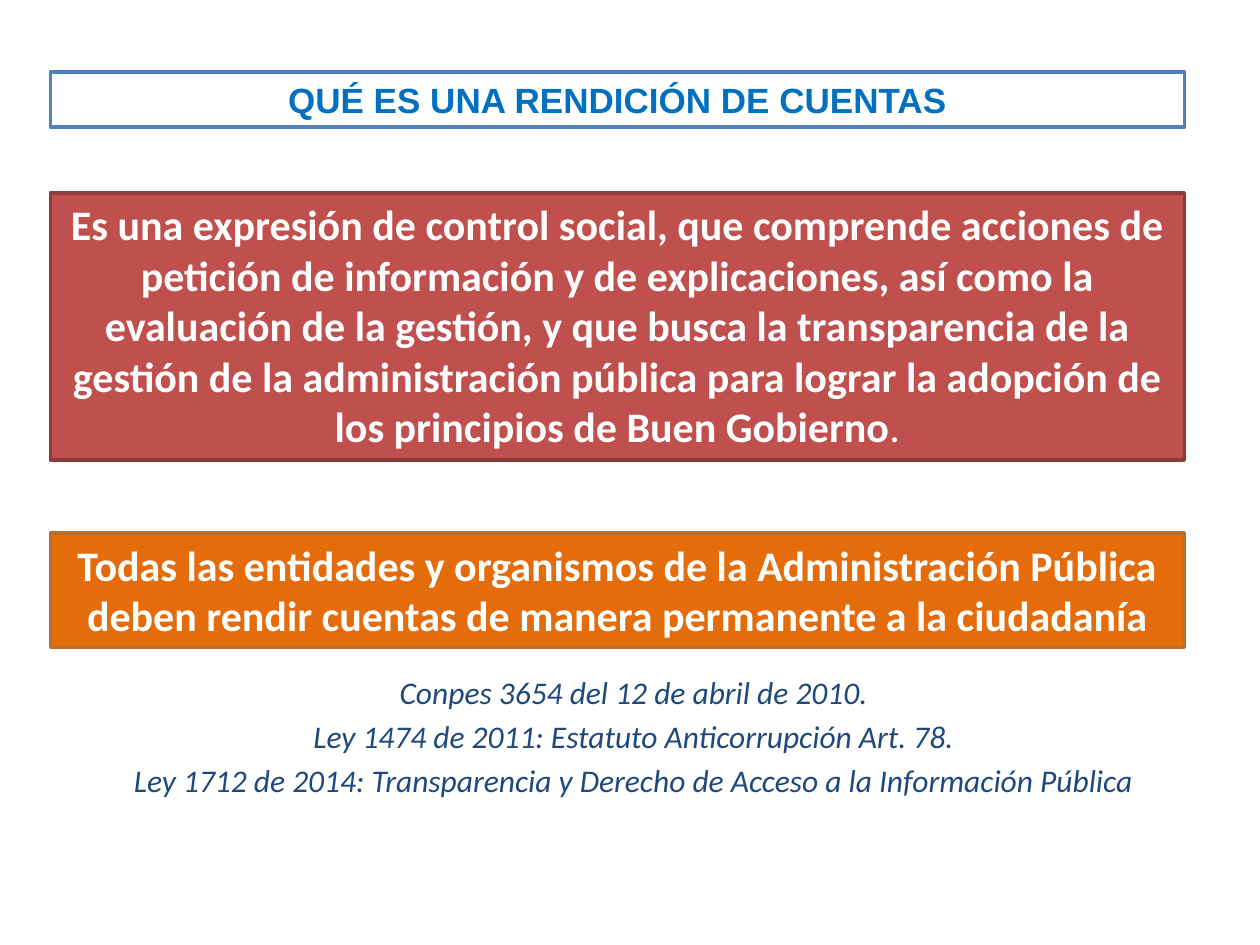
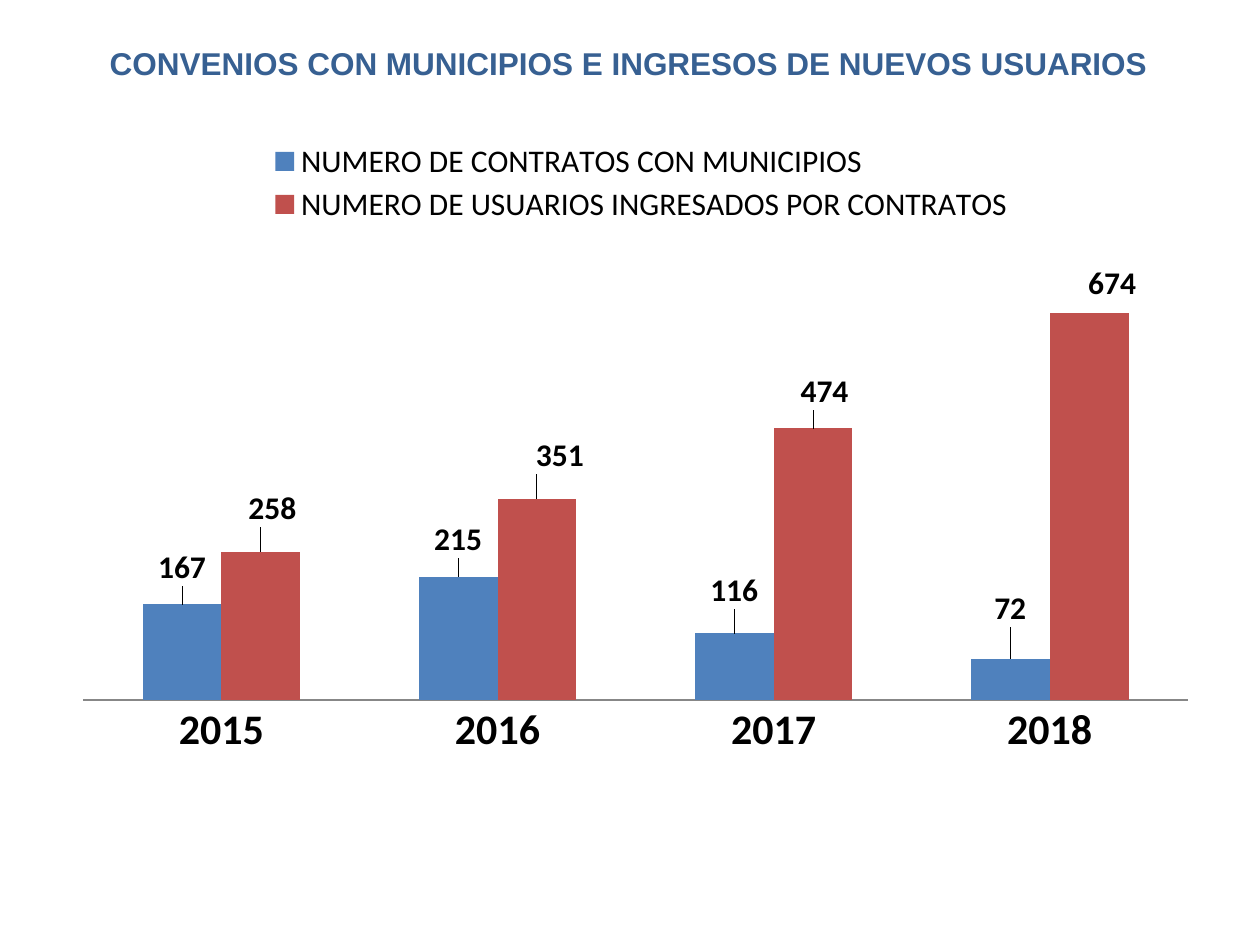
"""Build two slides on public accountability and municipal agreements."""
from dataclasses import dataclass
from typing import Optional

from lxml import etree
from pptx import Presentation
from pptx.chart.chart import Chart
from pptx.chart.data import CategoryChartData
from pptx.chart.series import BarSeries
from pptx.dml.color import RGBColor
from pptx.enum.chart import XL_CHART_TYPE as ChartType
from pptx.enum.chart import XL_LABEL_POSITION as LabelPosition
from pptx.enum.chart import XL_LEGEND_POSITION as LegendPosition
from pptx.enum.chart import XL_TICK_LABEL_POSITION as TickLabelPosition
from pptx.enum.chart import XL_TICK_MARK as TickMark
from pptx.enum.shapes import MSO_SHAPE as ShapeType
from pptx.enum.text import MSO_ANCHOR as Anchor
from pptx.enum.text import MSO_AUTO_SIZE as AutoSize
from pptx.enum.text import PP_ALIGN as Align
from pptx.oxml import parse_xml
from pptx.oxml.ns import nsdecls, qn
from pptx.shapes.base import BaseShape
from pptx.slide import Slide
from pptx.text.text import Font
from pptx.util import Inches, Pt


@dataclass(frozen=True)
class Theme:
    """Fonts, type sizes in points and colours."""

    heading_font: str = "Arial"
    body_font: str = "Calibri"
    title_size: int = 20
    large_size: int = 24
    small_size: int = 18
    white: str = "FFFFFF"
    black: str = "000000"
    blue: str = "4F81BD"
    red: str = "C0504D"
    red_border: str = "8E3B39"
    orange: str = "E46C0A"
    orange_border: str = "B76F34"
    bright_title: str = "0070C0"
    muted_title: str = "376092"
    law_text: str = "1F497D"
    axis: str = "878787"


@dataclass(frozen=True)
class Box:
    """A rectangle in inches."""

    left: float
    top: float
    width: float
    height: float


@dataclass(frozen=True)
class Panel:
    """A filled statement, with an optional ending in regular weight."""

    box: Box
    text: str
    fill: str
    border: str
    ending: str = ""


@dataclass(frozen=True)
class ChartSeries:
    """A chart series with its label shifts as fractions of the chart."""

    name: str
    values: tuple[int, ...]
    color: str
    label_shifts: tuple[tuple[float, float], ...]


THEME = Theme()
BORDER_WIDTH = 2
TITLE_LAYOUT, LIST_LAYOUT = 5, 1
PANEL_LEFT, PANEL_WIDTH = 0.4, 9

PANELS = (
    Panel(
        Box(PANEL_LEFT, 1.53, PANEL_WIDTH, 2.12),
        "Es una expresión de control social, que comprende acciones de petición de "
        "información y de explicaciones, así como la evaluación de la gestión, y que "
        "busca la transparencia de la gestión de la administración pública para lograr "
        "la adopción de los principios de Buen Gobierno",
        THEME.red,
        THEME.red_border,
        ".",
    ),
    Panel(
        Box(PANEL_LEFT, 4.23, PANEL_WIDTH, 0.91),
        "Todas las entidades y organismos de la Administración Pública deben rendir "
        "cuentas de manera permanente a la ciudadanía",
        THEME.orange,
        THEME.orange_border,
    ),
)
LAWS = (
    "Conpes 3654 del 12 de abril de 2010.",
    "Ley 1474 de 2011: Estatuto Anticorrupción Art. 78.",
    "Ley 1712 de 2014: Transparencia y Derecho de Acceso a la Información Pública",
)
YEARS = ("2015", "2016", "2017", "2018")
SERIES = (
    ChartSeries(
        "NUMERO DE CONTRATOS CON MUNICIPIOS",
        (167, 215, 116, 72),
        THEME.blue,
        ((0, -0.02), (0, -0.02), (0, -0.03), (0, -0.04)),
    ),
    ChartSeries(
        "NUMERO DE USUARIOS INGRESADOS POR CONTRATOS",
        (258, 351, 474, 674),
        THEME.red,
        ((0.01, -0.03), (0.02, -0.03), (0.01, -0.02), (0.02, -0.01)),
    ),
)


def set_font(font: Font, size: int, color: str, name: str = THEME.body_font,
             bold: bool = False, italic: bool = False) -> None:
    """Format a font."""
    font.name, font.size = name, Pt(size)
    font.bold, font.italic = bold, italic
    font.color.rgb = RGBColor.from_string(color)


def place(shape: BaseShape, box: Box) -> None:
    """Move and size a shape."""
    shape.left, shape.top = Inches(box.left), Inches(box.top)
    shape.width, shape.height = Inches(box.width), Inches(box.height)


def paint(shape: BaseShape, fill: str, border: str) -> None:
    """Fill and outline a shape."""
    shape.fill.solid()
    shape.fill.fore_color.rgb = RGBColor.from_string(fill)
    shape.line.color.rgb = RGBColor.from_string(border)
    shape.line.width = Pt(BORDER_WIDTH)


def set_title(slide: Slide, text: str, box: Box, size: int, color: str) -> BaseShape:
    """Fill the title placeholder."""
    title = slide.shapes.title
    place(title, box)
    frame = title.text_frame
    frame.text = text
    frame.auto_size, frame.vertical_anchor = AutoSize.NONE, Anchor.MIDDLE
    paragraph = frame.paragraphs[0]
    paragraph.alignment = Align.CENTER
    set_font(paragraph.font, size, color, THEME.heading_font, bold=True)
    return title


def add_panel(slide: Slide, panel: Panel) -> None:
    """Draw a filled statement."""
    shape = slide.shapes.add_shape(ShapeType.RECTANGLE, 0, 0, 0, 0)
    place(shape, panel.box)
    paint(shape, panel.fill, panel.border)
    shape.shadow.inherit = False
    frame = shape.text_frame
    frame.word_wrap, frame.vertical_anchor = True, Anchor.TOP
    paragraph = frame.paragraphs[0]
    paragraph.alignment = Align.CENTER
    paragraph.add_run().text = panel.text
    set_font(paragraph.font, THEME.large_size, THEME.white, bold=True)
    if panel.ending:
        run = paragraph.add_run()
        run.text = panel.ending
        run.font.bold = False


def fill_laws(slide: Slide, box: Box) -> None:
    """List the laws in the body placeholder without bullets."""
    body = slide.placeholders[1]
    place(body, box)
    frame = body.text_frame
    frame.text = "\n".join(LAWS)
    frame.auto_size = AutoSize.NONE
    for index, paragraph in enumerate(frame.paragraphs):
        properties = paragraph._p.get_or_add_pPr()
        properties.set("marL", "0")
        properties.set("indent", "0")
        etree.SubElement(properties, qn("a:buNone"))
        paragraph.alignment = Align.CENTER
        paragraph.space_before = Pt(3.6 if index else 0)
        set_font(paragraph.font, THEME.small_size, THEME.law_text, italic=True)


def make_layout(target: Optional[str] = None, **values: float) -> etree._Element:
    """Make a manual chart layout."""
    entries = [("layoutTarget", target)] if target else []
    if "w" in values:
        entries += [("xMode", "edge"), ("yMode", "edge")]
    entries += values.items()
    children = "".join(f'<c:{tag} val="{value}"/>' for tag, value in entries)
    return parse_xml(
        f'<c:layout {nsdecls("c")}><c:manualLayout>{children}</c:manualLayout></c:layout>'
    )


def format_series(series: BarSeries, content: ChartSeries) -> None:
    """Colour a series and shift its value labels."""
    series.format.fill.solid()
    series.format.fill.fore_color.rgb = RGBColor.from_string(content.color)
    labels = series.data_labels
    labels.show_value, labels.position = True, LabelPosition.OUTSIDE_END
    set_font(labels.font, THEME.small_size, THEME.black, bold=True)
    for index, (x, y) in enumerate(content.label_shifts):
        label = series.points[index].data_label
        label.position = LabelPosition.OUTSIDE_END
        set_font(label.font, THEME.small_size, THEME.black, bold=True)
    for element, (x, y) in zip(series._element.iter(qn("c:dLbl")), content.label_shifts):
        element.insert(1, make_layout(x=x, y=y))


def format_axes(chart: Chart) -> None:
    """Show only the year axis."""
    years, values = chart.category_axis, chart.value_axis
    years.major_tick_mark = years.minor_tick_mark = TickMark.NONE
    years.tick_label_position = TickLabelPosition.NEXT_TO_AXIS
    years.format.line.color.rgb = RGBColor.from_string(THEME.axis)
    set_font(years.tick_labels.font, THEME.large_size, THEME.black, bold=True)
    values.minimum_scale, values.maximum_scale = 0, 800
    values.has_major_gridlines = values.visible = False


def add_agreements_chart(slide: Slide, box: Box) -> None:
    """Draw the contracts and users chart."""
    data = CategoryChartData()
    data.categories = YEARS
    for content in SERIES:
        data.add_series(content.name, content.values)
    frame = slide.shapes.add_chart(ChartType.COLUMN_CLUSTERED, 0, 0, 0, 0, data)
    place(frame, box)
    chart = frame.chart
    chart.has_title = False
    set_font(chart.font, 10, THEME.black)
    plot = chart.plots[0]
    plot.gap_width, plot.overlap, plot.vary_by_categories = 150, 0, False
    for series, content in zip(plot.series, SERIES):
        format_series(series, content)
    format_axes(chart)
    chart.has_legend = True
    legend = chart.legend
    legend.position, legend.include_in_layout = LegendPosition.TOP, False
    set_font(legend.font, THEME.small_size, THEME.black)
    legend._element.find(qn("c:legendPos")).addnext(
        make_layout(x=0.18, y=0.02, w=0.65, h=0.14))
    area = chart._chartSpace.chart.plotArea
    for old_layout in area.findall(qn("c:layout")):
        area.remove(old_layout)
    area.insert(0, make_layout("inner", x=0.02, y=0.18, w=0.96, h=0.71))


def build_definition(presentation: Presentation) -> None:
    """Build the definition slide."""
    slide = presentation.slides.add_slide(presentation.slide_layouts[LIST_LAYOUT])
    title = set_title(slide, "QUÉ ES UNA RENDICIÓN DE CUENTAS",
                      Box(PANEL_LEFT, 0.57, PANEL_WIDTH, 0.44),
                      THEME.title_size, THEME.bright_title)
    paint(title, THEME.white, THEME.blue)
    for panel in PANELS:
        add_panel(slide, panel)
    fill_laws(slide, Box(0.53, 5.29, 9, 1.12))


def build_agreements(presentation: Presentation) -> None:
    """Build the agreements slide."""
    slide = presentation.slides.add_slide(presentation.slide_layouts[TITLE_LAYOUT])
    set_title(slide, "CONVENIOS CON MUNICIPIOS E INGRESOS DE NUEVOS USUARIOS",
              Box(0.66, 0.3, 8.66, 0.4), THEME.small_size, THEME.muted_title)
    add_agreements_chart(slide, Box(0.48, 0.99, 9.13, 5.13))


def main() -> None:
    """Build and save the presentation."""
    presentation = Presentation()
    presentation.slide_width, presentation.slide_height = Inches(10), Inches(7.5)
    build_definition(presentation)
    build_agreements(presentation)
    presentation.save("out.pptx")


if __name__ == "__main__":
    main()
